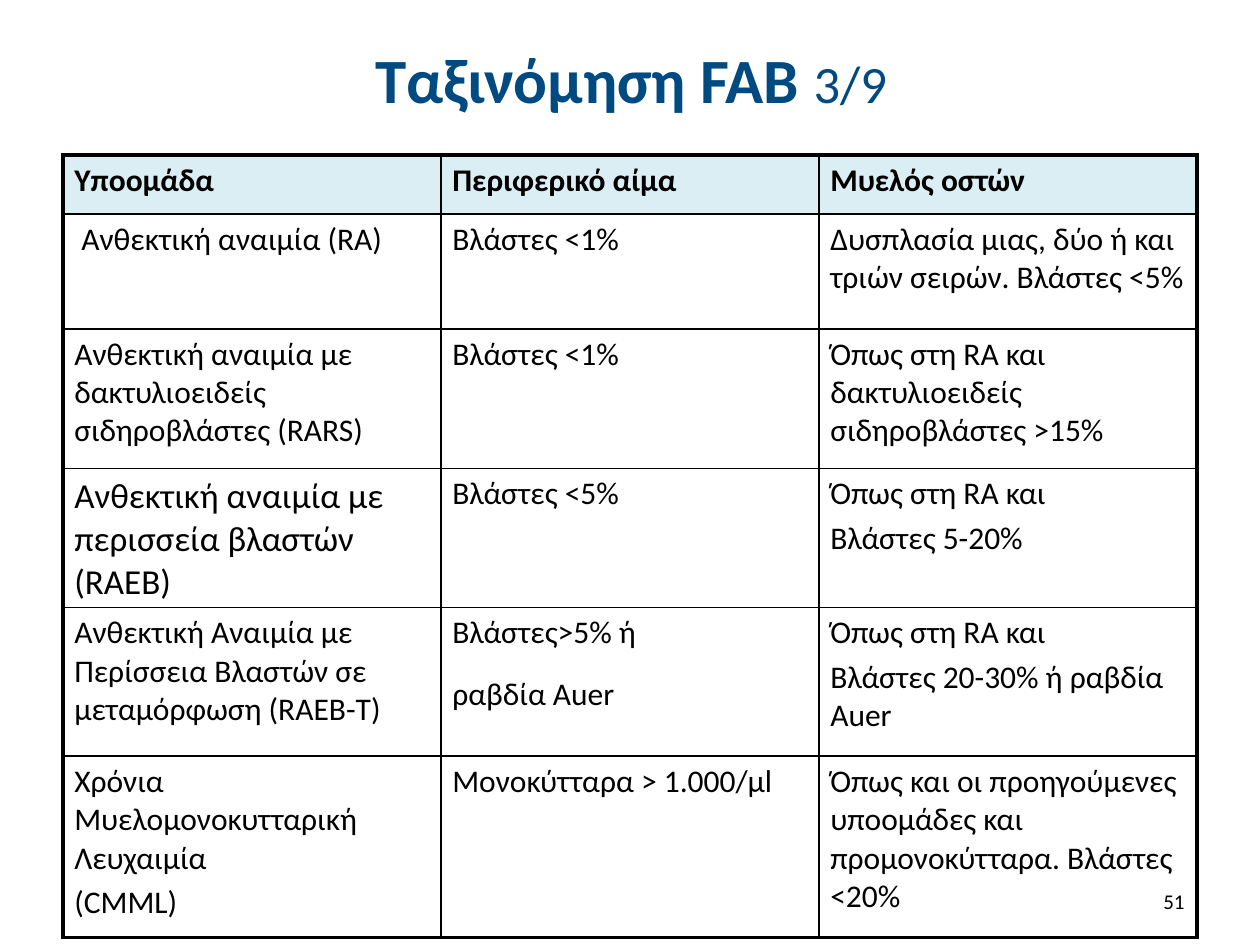
from lxml.etree import SubElement
from pptx import Presentation
from pptx.dml.color import RGBColor
from pptx.enum.text import MSO_ANCHOR, PP_ALIGN
from pptx.oxml.ns import qn
from pptx.util import Inches, Pt

FONT = "Calibri"
BLACK = RGBColor(0x00, 0x00, 0x00)
WHITE = RGBColor(0xFF, 0xFF, 0xFF)
NAVY = RGBColor(0x00, 0x4A, 0x82)
PALE_BLUE = RGBColor(0xDB, 0xEE, 0xF4)

TITLE = [("Ταξινόμηση FAB ", 36, True), ("3/9", 30, False)]
PAGE_NUMBER = [("51", 12, False)]
SUBGROUPS = [
    ["Υποομάδα", "Περιφερικό αίμα", "Μυελός οστών"],
    [" Ανθεκτική αναιμία (RA)", "Βλάστες <1%",
     "Δυσπλασία μιας, δύο ή και τριών σειρών. Βλάστες <5%"],
    ["Ανθεκτική αναιμία με δακτυλιοειδείς σιδηροβλάστες (RARS)", "Βλάστες <1%",
     "Όπως στη RA και δακτυλιοειδείς σιδηροβλάστες >15%"],
    ["Ανθεκτική αναιμία με περισσεία βλαστών (RAEB)", "Βλάστες <5%",
     "Όπως στη RA και\nΒλάστες 5-20%"],
    ["Ανθεκτική Αναιμία με Περίσσεια Βλαστών σε μεταμόρφωση (RAEB-T)",
     "Βλάστες>5% ή\nραβδία Auer",
     "Όπως στη RA και\nΒλάστες 20-30% ή ραβδία Auer"],
    ["Χρόνια Μυελομονοκυτταρική Λευχαιμία\n(CMML)", "Μονοκύτταρα > 1.000/μl",
     "Όπως και οι προηγούμενες υποομάδες και προμονοκύτταρα. Βλάστες <20%"],
]
ROW_HEIGHTS = [0.47, 0.91, 1.11, 0.92, 1.18, 1.44]
COLUMN_WIDTH = 3
LARGE_CELL = (3, 0)
WIDE_SPACE_CELL = (4, 1)


def style_run(run, size, bold, color):
    run.font.name = FONT
    run.font.size = Pt(size)
    run.font.bold = bold
    run.font.color.rgb = color


def add_line(slide, box, pieces, align, color):
    frame = slide.shapes.add_textbox(*map(Inches, box)).text_frame
    frame.word_wrap = True
    frame.vertical_anchor = MSO_ANCHOR.MIDDLE
    paragraph = frame.paragraphs[0]
    paragraph.alignment = align
    for words, size, bold in pieces:
        run = paragraph.add_run()
        run.text = words
        style_run(run, size, bold, color)


def set_borders(cell, widths):
    properties = cell._tc.get_or_add_tcPr()
    for side, width in widths.items():
        border = SubElement(properties, qn(f"a:ln{side}"), w=str(Pt(width)))
        fill = SubElement(border, qn("a:solidFill"))
        SubElement(fill, qn("a:srgbClr"), val=str(BLACK))


def add_subgroups(slide):
    rows, columns = len(SUBGROUPS), len(SUBGROUPS[0])
    table = slide.shapes.add_table(
        rows, columns, Inches(0.5), Inches(1.23),
        Inches(COLUMN_WIDTH * columns), Inches(sum(ROW_HEIGHTS))).table
    table.horz_banding = False
    for row, height in zip(table.rows, ROW_HEIGHTS):
        row.height = Inches(height)
    for r, entries in enumerate(SUBGROUPS):
        for c, entry in enumerate(entries):
            cell = table.cell(r, c)
            outer = {"L": c == 0, "R": c == columns - 1,
                     "T": r == 0, "B": r == rows - 1}
            set_borders(cell, {side: 2.25 if edge else 1 for side, edge in outer.items()})
            cell.fill.solid()
            cell.fill.fore_color.rgb = PALE_BLUE if r == 0 else WHITE
            cell.margin_left = cell.margin_right = Inches(0.09)
            cell.text_frame.text = entry
            size = 20 if (r, c) == LARGE_CELL else 18
            for paragraph in cell.text_frame.paragraphs:
                paragraph.space_before = Pt(size * 0.2)
                style_run(paragraph.runs[0], size, r == 0, BLACK)
    space = table.cell(*WIDE_SPACE_CELL).text_frame.paragraphs[-1].add_run()
    space.text = " "
    style_run(space, 28, False, BLACK)


def main():
    deck = Presentation()
    deck.slide_width, deck.slide_height = Inches(10), Inches(7.5)
    slide = deck.slides.add_slide(deck.slide_layouts[6])
    add_line(slide, (0.51, 0.13, 9, 0.99), TITLE, PP_ALIGN.CENTER, NAVY)
    add_subgroups(slide)
    add_line(slide, (7.17, 6.95, 2.33, 0.4), PAGE_NUMBER, PP_ALIGN.RIGHT, BLACK)
    deck.save("out.pptx")


if __name__ == "__main__":
    main()
